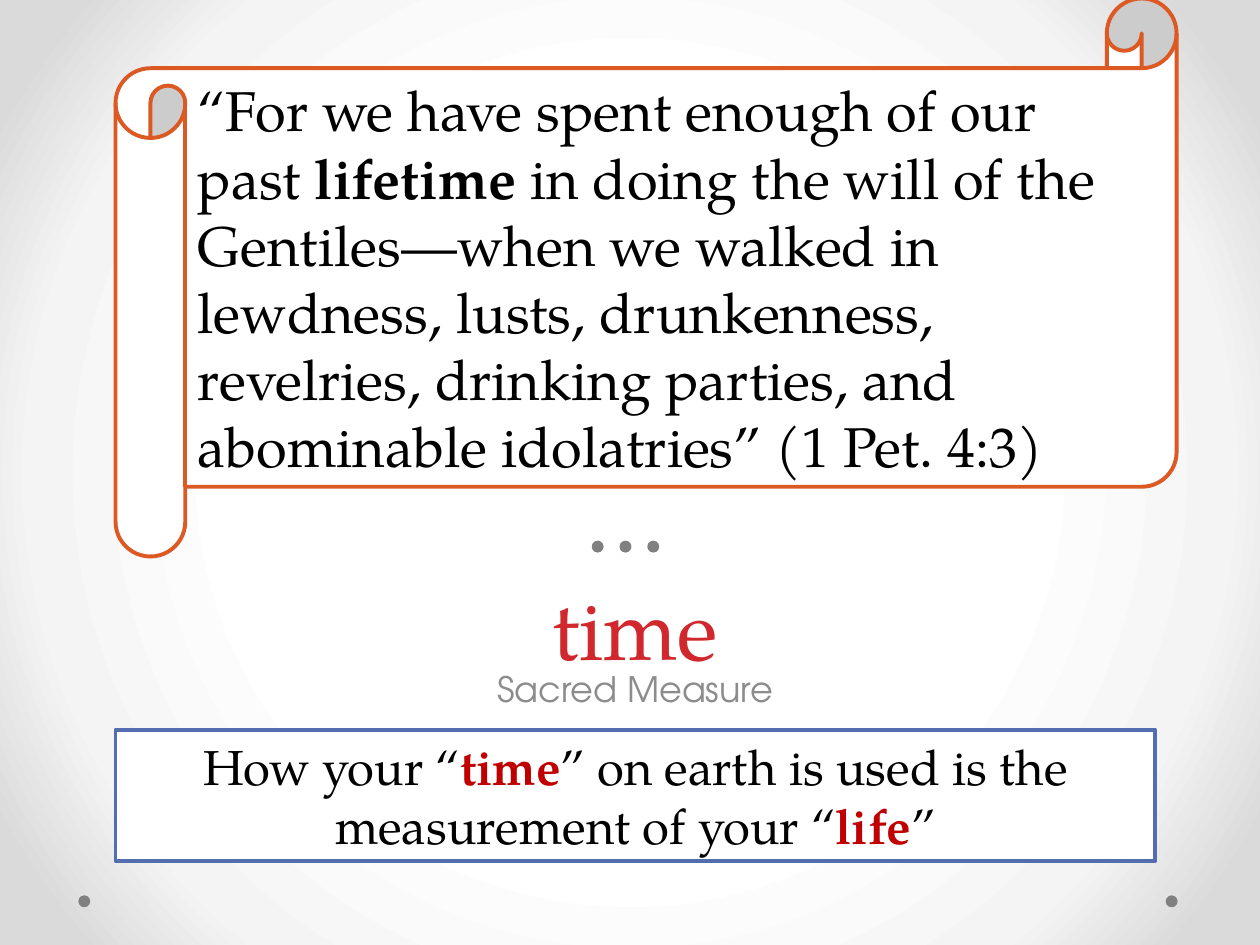
from lxml.etree import fromstring
from pptx import Presentation
from pptx.dml.color import RGBColor
from pptx.enum.shapes import MSO_SHAPE
from pptx.enum.text import MSO_ANCHOR, PP_ALIGN
from pptx.util import Cm, Pt

WHITE = RGBColor(0xFF, 0xFF, 0xFF)
BLACK = RGBColor(0, 0, 0)
GREY = RGBColor(0x80, 0x80, 0x80)
PALE = RGBColor(0x8C, 0x8C, 0x8C)
RED = RGBColor(0xD1, 0x28, 0x2E)
DARK_RED = RGBColor(0xC0, 0, 0)
BLUE = RGBColor(0x52, 0x6D, 0xB0)
ORANGE = RGBColor(0xDC, 0x59, 0x24)

SERIF = "TeX Gyre Pagella"
SANS = "TeX Gyre Adventor"

GLOW = """
<a:gradFill xmlns:a="http://schemas.openxmlformats.org/drawingml/2006/main"
    rotWithShape="1">
  <a:gsLst>
    <a:gs pos="50000"><a:srgbClr val="FFFFFF"/></a:gs>
    <a:gs pos="76000"><a:srgbClr val="F4F4F4"/></a:gs>
    <a:gs pos="92000"><a:srgbClr val="DADADA"/></a:gs>
  </a:gsLst>
  <a:path path="circle">
    <a:fillToRect l="50000" t="50000" r="50000" b="50000"/>
  </a:path>
</a:gradFill>"""


def set_glow(slide):
    """Fill the background with a round gradient."""
    slide.background.fill.gradient()
    old = slide.element.xpath(".//p:bgPr/a:gradFill")[0]
    old.getparent().replace(old, fromstring(GLOW))


def add_form(slide, kind, box, fill, line=None):
    form = slide.shapes.add_shape(kind, *map(Cm, box))
    form.shadow.inherit = False
    form.fill.solid()
    form.fill.fore_color.rgb = fill
    if line is None:
        form.line.fill.background()
    else:
        form.line.color.rgb = line
        form.line.width = Pt(2.25)
    return form


def add_dot(slide, left, top):
    add_form(slide, MSO_SHAPE.OVAL, (left, top, 0.24, 0.24), GREY)


def write(shape, parts, size, align, color=BLACK, accent=BLACK, font=SERIF):
    """Write one paragraph; every second part is bold in the accent colour."""
    shape.text_frame.word_wrap = True
    para = shape.text_frame.paragraphs[0]
    para.alignment = align
    para.font.name = font
    para.font.size = Pt(size)
    for i, part in enumerate(parts):
        run = para.add_run()
        run.text = part
        strong = i % 2 == 1
        run.font.bold = strong
        run.font.color.rgb = accent if strong else color


def add_label(slide, box, text, size, color, font, anchor):
    label = slide.shapes.add_textbox(*map(Cm, box))
    label.text_frame.vertical_anchor = anchor
    write(label, [text], size, PP_ALIGN.CENTER, color, font=font)


def main():
    deck = Presentation()
    deck.slide_width, deck.slide_height = Cm(25.4), Cm(19.05)
    slide = deck.slides.add_slide(deck.slide_layouts[6])
    set_glow(slide)

    for left in (1.58, 23.5):
        add_dot(slide, left, 18.05)
    for i in range(3):
        add_dot(slide, 11.93 + i * 0.56, 10.9)

    claim = add_form(slide, MSO_SHAPE.RECTANGLE, (2.33, 14.71, 20.96, 2.65),
                     WHITE, BLUE)
    write(claim, ["How your “", "time", "” on earth is used is the "
                  "measurement of your “", "life", "”"],
          28, PP_ALIGN.CENTER, accent=DARK_RED)

    scroll = add_form(slide, MSO_SHAPE.HORIZONTAL_SCROLL,
                      (2.33, -0.03, 21.39, 11.25), WHITE, ORANGE)
    write(scroll, ["“For we have spent enough of our past ", "lifetime",
                   " in doing the will of the Gentiles—when we walked in "
                   "lewdness, lusts, drunkenness, revelries, drinking "
                   "parties, and abominable idolatries” (1 Pet. 4:3)"],
          32, PP_ALIGN.LEFT)

    add_label(slide, (2.01, 6.81, 21.59, 6.96), "time", 48, RED, SERIF,
              MSO_ANCHOR.BOTTOM)
    add_label(slide, (2.01, 13.34, 21.59, 1.12), "Sacred Measure", 20, PALE,
              SANS, MSO_ANCHOR.TOP)

    deck.save("out.pptx")


if __name__ == "__main__":
    main()
